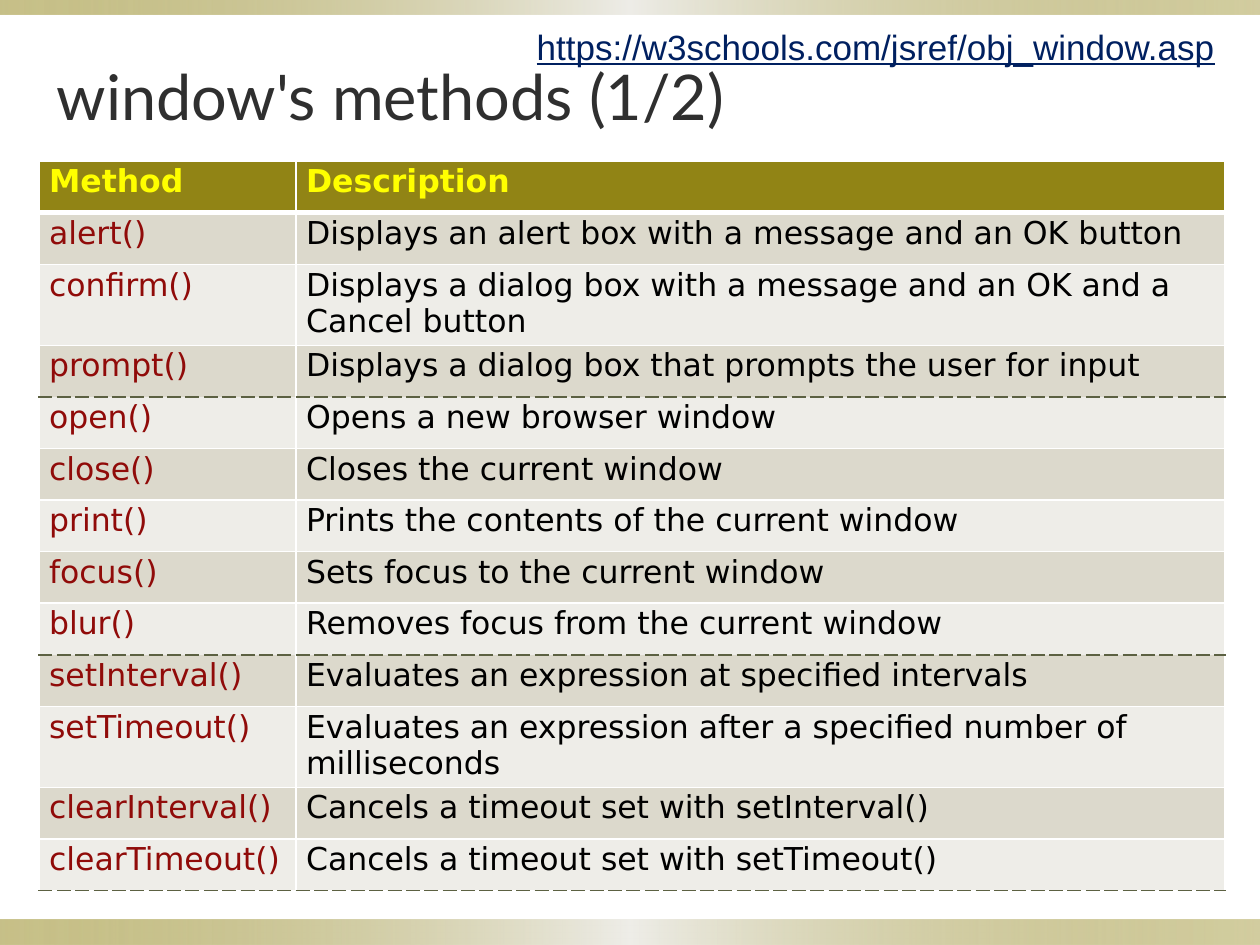
from lxml import etree
from pptx import Presentation
from pptx import util as u
from pptx.dml.color import RGBColor
from pptx.enum import shapes, text
from pptx.oxml import parse_xml
from pptx.oxml.ns import nsdecls, qn

OLIVE = RGBColor(0x91, 0x84, 0x15)
BEIGE = RGBColor(0xDC, 0xD9, 0xCC)
PALE = RGBColor(0xEE, 0xED, 0xE8)
WHITE = RGBColor(0xFF, 0xFF, 0xFF)
BLACK = RGBColor(0x00, 0x00, 0x00)
YELLOW = RGBColor(0xFF, 0xFF, 0x00)
DARK_RED = RGBColor(0x90, 0x0B, 0x09)
DASH_GREEN = RGBColor(0x5C, 0x61, 0x42)
CHARCOAL = RGBColor(0x2F, 0x2F, 0x2F)
NAVY = RGBColor(0x00, 0x20, 0x60)

METHODS = [
    ("Method", "Description"),
    ("alert()", "Displays an alert box with a message and an OK button"),
    ("confirm()", "Displays a dialog box with a message and an OK and a Cancel button"),
    ("prompt()", "Displays a dialog box that prompts the user for input"),
    ("open()", "Opens a new browser window"),
    ("close()", "Closes the current window"),
    ("print()", "Prints the contents of the current window"),
    ("focus()", "Sets focus to the current window"),
    ("blur()", "Removes focus from the current window"),
    ("setInterval()", "Evaluates an expression at specified intervals"),
    ("setTimeout()", "Evaluates an expression after a specified number of milliseconds"),
    ("clearInterval()", "Cancels a timeout set with setInterval()"),
    ("clearTimeout()", "Cancels a timeout set with setTimeout()"),
]
TWO_LINE_ROWS = {2, 10}
GROUP_ENDS = {3, 8, 12}


def write(frame, words, color, **font):
    """Put one left-aligned run in the frame and format it."""
    para = frame.paragraphs[0]
    para.alignment = text.PP_ALIGN.LEFT
    span = para.add_run()
    span.text = words
    span.font.color.rgb = color
    for name, value in font.items():
        setattr(span.font, name, value)


def add_border(cell, side, color, points=1, dash="solid"):
    line = etree.SubElement(cell._tc.get_or_add_tcPr(), qn(f"a:ln{side}"),
                            w=str(u.Pt(points)))
    fill = etree.SubElement(line, qn("a:solidFill"))
    etree.SubElement(fill, qn("a:srgbClr"), val=str(color))
    etree.SubElement(line, qn("a:prstDash"), val=dash)


deck = Presentation()
deck.slide_width, deck.slide_height = u.Cm(25.4), u.Cm(19.05)
page = deck.slides.add_slide(deck.slide_layouts[5])

# Gradient bars along the top and bottom edges
for top, height in ((18.54, 0.51), (0, 0.3)):
    bar = page.shapes.add_shape(shapes.MSO_SHAPE.RECTANGLE, 0, u.Cm(top),
                                deck.slide_width, u.Cm(height))
    bar.shadow.inherit = False
    bar.line.fill.background()
    bar.fill.gradient()
    bar.fill.gradient_angle = 0
    stops = bar._element.spPr.find(qn("a:gradFill")).find(qn("a:gsLst"))
    stops.clear()
    for place, color, opacity in ((0, OLIVE, 50), (50, PALE, 100), (100, OLIVE, 40)):
        stops.append(parse_xml(
            f'<a:gs {nsdecls("a")} pos="{place * 1000}"><a:srgbClr val="{color}">'
            f'<a:alpha val="{opacity * 1000}"/></a:srgbClr></a:gs>'))

title = page.shapes.title
title.left, title.top, title.width, title.height = map(u.Cm, (0.89, 0.76, 22.86, 2.31))
title.text_frame.vertical_anchor = text.MSO_ANCHOR.MIDDLE
write(title.text_frame, "window's methods (1/2)", CHARCOAL, size=u.Pt(36), name="Lato")

# Methods table
table = page.shapes.add_table(len(METHODS), 2, u.Cm(0.79), u.Cm(3.25),
                              u.Cm(23.9), u.Cm(14.6)).table
table.first_row = table.horz_banding = False
for column, width in zip(table.columns, (5.18, 18.72)):
    column.width = u.Cm(width)

cell_format = {"margin_left": u.Cm(0.2), "margin_right": u.Cm(0.05),
               "margin_top": u.Cm(0.05), "margin_bottom": u.Cm(0.05)}
for i, entry in enumerate(METHODS):
    header = i == 0
    table.rows[i].height = u.Cm(1.63 if i in TWO_LINE_ROWS else 1.04)
    colors = (YELLOW, YELLOW) if header else (DARK_RED, BLACK)
    for j, words in enumerate(entry):
        cell = table.cell(i, j)
        for name, value in cell_format.items():
            setattr(cell, name, value)
        write(cell.text_frame, words, colors[j], size=u.Pt(18),
              name="DejaVu Sans", bold=header)
        add_border(cell, "L", WHITE)
        add_border(cell, "R", WHITE)
        for side, edge in (("T", i - 1), ("B", i)):
            if edge in GROUP_ENDS:
                add_border(cell, side, DASH_GREEN, dash="dash")
            else:
                add_border(cell, side, WHITE, 3 if edge == 0 else 1)
        cell.fill.solid()
        cell.fill.fore_color.rgb = OLIVE if header else BEIGE if i % 2 else PALE

address = page.shapes.add_textbox(u.Cm(10.57), u.Cm(0.38), u.Cm(14.27), u.Cm(1.12))
address.text_frame.word_wrap = False
address.text_frame.auto_size = text.MSO_AUTO_SIZE.SHAPE_TO_FIT_TEXT
write(address.text_frame, "https://w3schools.com/jsref/obj_window.asp", NAVY,
      size=u.Pt(20), name="Arial", underline=True)

deck.save("out.pptx")
